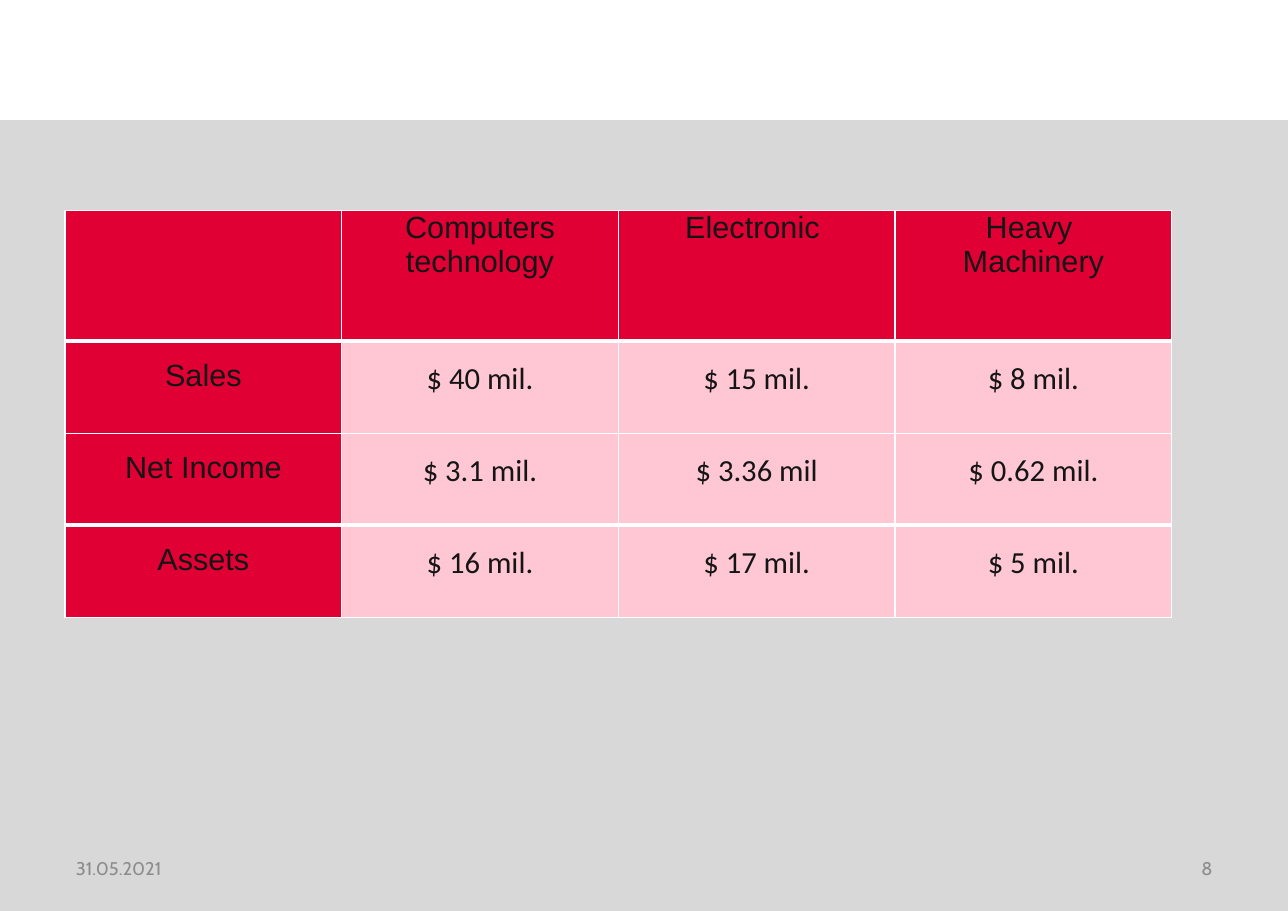
"""Build a slide with a table of sales, income and assets by division."""
from lxml.etree import SubElement
from pptx import Presentation
from pptx.dml.color import RGBColor
from pptx.enum.shapes import MSO_SHAPE
from pptx.enum.text import MSO_ANCHOR, PP_ALIGN
from pptx.oxml.ns import qn
from pptx.util import Cm, Pt

COLORS = {
    "panel": "D8D8D8",
    "header": "E00034",
    "value": "FFC6D3",
    "border": "FFFFFF",
    "text": "151515",
    "footer": "8C8C8C",
}
ROWS = [
    ["", "Computers technology", "Electronic ", "Heavy \nMachinery"],
    ["Sales", "$ 40 mil.", "$ 15 mil.", "$ 8 mil."],
    ["Net Income", "$ 3.1 mil.", "$ 3.36 mil", "$ 0.62 mil."],
    ["Assets", "$ 16 mil.", "$ 17 mil.", "$ 5 mil."],
]
COLUMN_WIDTH = 6.38
HEADER_HEIGHT, ROW_HEIGHT = 3.02, 2.12
THICK_EDGES = (1, 3)


class SlideBuilder:
    def __init__(self, slide):
        self.slide = slide

    def color(self, name):
        return RGBColor.from_string(COLORS[name])

    def style(self, paragraph, font, size, color, alignment):
        paragraph.alignment = alignment
        for run in paragraph.runs:
            run.font.name = font
            run.font.size = Pt(size)
            run.font.color.rgb = self.color(color)

    def panel(self, left, top, width, height):
        shape = self.slide.shapes.add_shape(
            MSO_SHAPE.RECTANGLE, Cm(left), Cm(top), Cm(width), Cm(height))
        shape.shadow.inherit = False
        shape.fill.solid()
        shape.fill.fore_color.rgb = self.color("panel")
        shape.line.fill.background()

    def footer(self, text, left, alignment):
        box = self.slide.shapes.add_textbox(Cm(left), Cm(19.46), Cm(6.93), Cm(1.12))
        text_frame = box.text_frame
        text_frame.word_wrap = True
        text_frame.vertical_anchor = MSO_ANCHOR.MIDDLE
        text_frame.text = text
        self.style(text_frame.paragraphs[0], "Cabin", 12, "footer", alignment)

    def borders(self, cell, row):
        top = 3 if row in THICK_EDGES else 1
        bottom = 3 if row + 1 in THICK_EDGES else 1
        properties = cell._tc.get_or_add_tcPr()
        for side, width in (("L", 1), ("R", 1), ("T", top), ("B", bottom)):
            line = SubElement(properties, qn(f"a:ln{side}"), w=str(Pt(width)))
            fill = SubElement(line, qn("a:solidFill"))
            SubElement(fill, qn("a:srgbClr"), val=COLORS["border"])

    def cell(self, cell, text, row, column):
        is_value = row > 0 and column > 0
        self.borders(cell, row)
        cell.fill.solid()
        cell.fill.fore_color.rgb = self.color("value" if is_value else "header")
        cell.margin_left = cell.margin_right = Cm(0.18)
        cell.margin_top = cell.margin_bottom = 0
        cell.text_frame.text = text
        for paragraph in cell.text_frame.paragraphs:
            font = "Calibri" if is_value else "Arial"
            self.style(paragraph, font, 20, "text", PP_ALIGN.CENTER)
            if row > 0:
                paragraph.line_spacing = 1.5

    def table(self, rows, left, top):
        heights = [HEADER_HEIGHT] + [ROW_HEIGHT] * (len(rows) - 1)
        columns = len(rows[0])
        table = self.slide.shapes.add_table(
            len(rows), columns, Cm(left), Cm(top),
            Cm(COLUMN_WIDTH * columns), Cm(sum(heights))).table
        for column in table.columns:
            column.width = Cm(COLUMN_WIDTH)
        for row, texts in enumerate(rows):
            table.rows[row].height = Cm(heights[row])
            for column, text in enumerate(texts):
                self.cell(table.cell(row, column), text, row, column)


def main():
    presentation = Presentation()
    presentation.slide_width = Cm(29.7)
    presentation.slide_height = Cm(21)
    slide = presentation.slides.add_slide(presentation.slide_layouts[6])
    builder = SlideBuilder(slide)
    builder.panel(0, 2.77, 29.7, 18.23)
    builder.footer("31.05.2021", 1.5, PP_ALIGN.LEFT)
    builder.footer("8", 21.28, PP_ALIGN.RIGHT)
    builder.table(ROWS, 1.5, 4.85)
    presentation.save("out.pptx")


if __name__ == "__main__":
    main()
